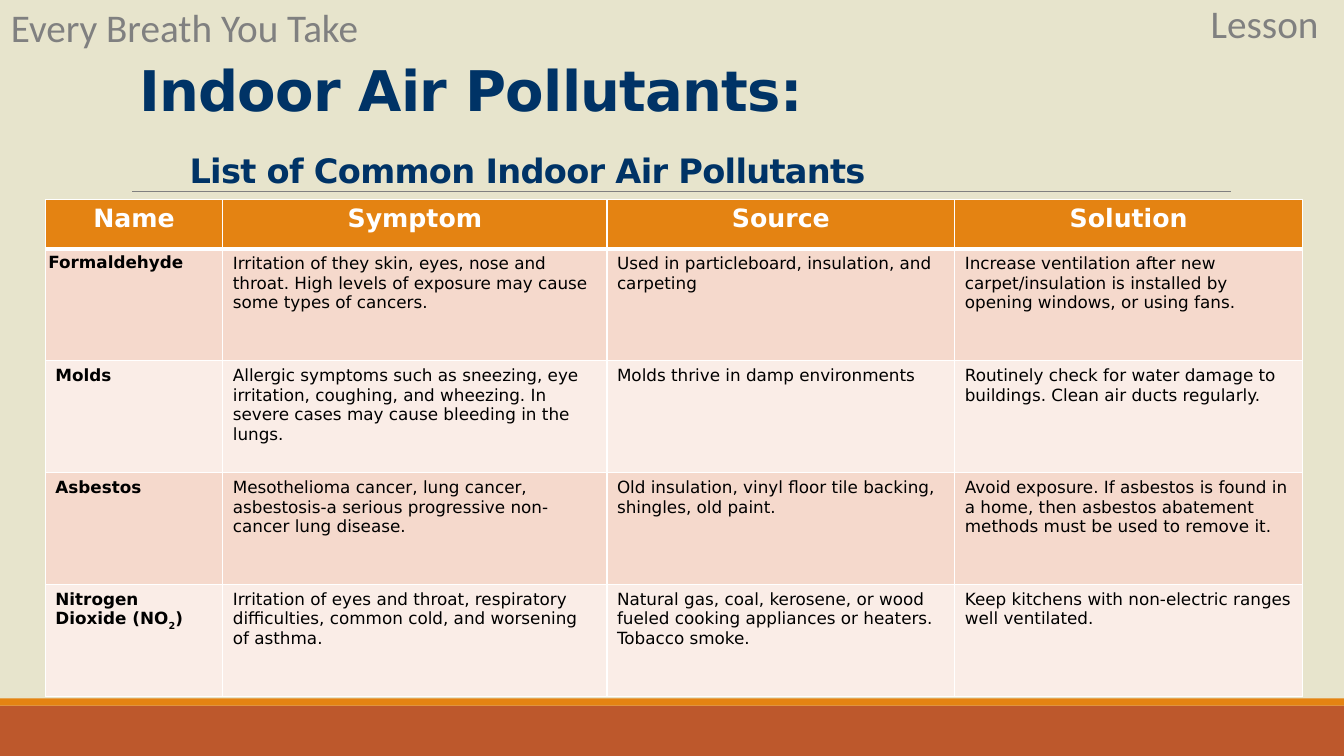
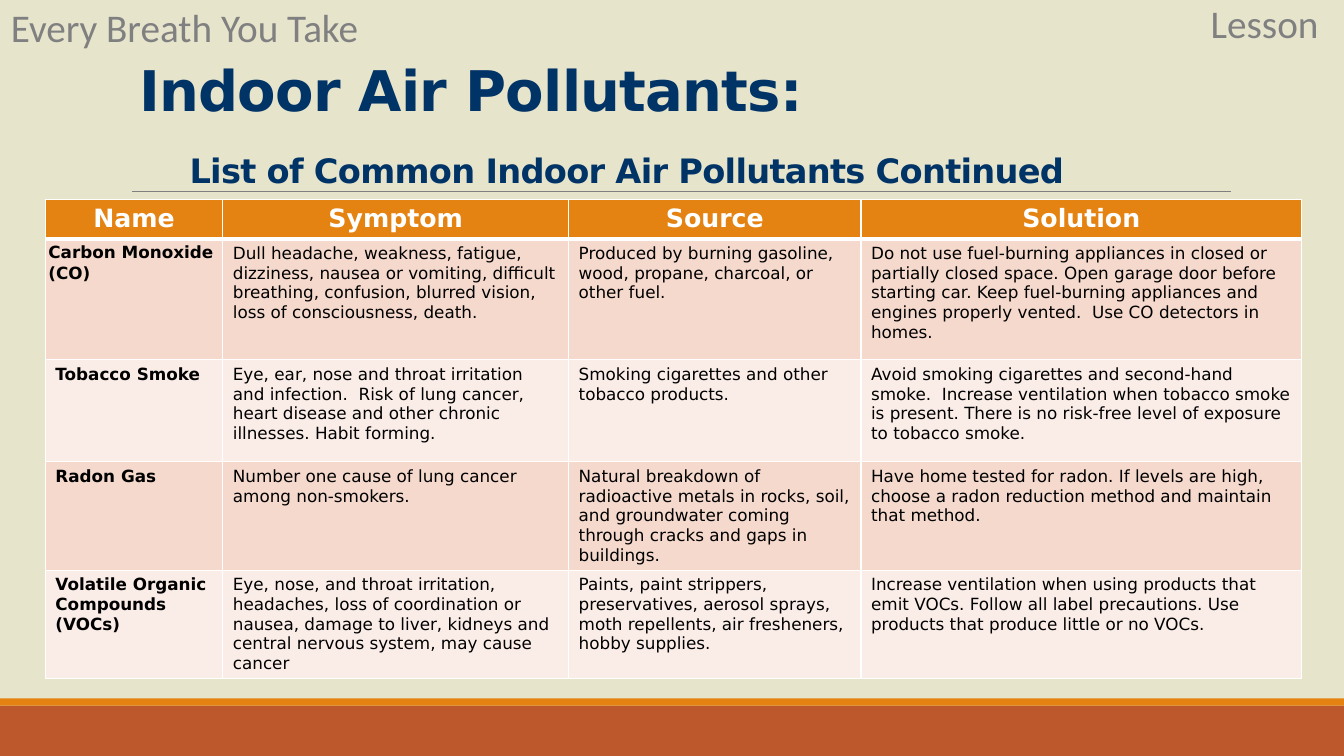
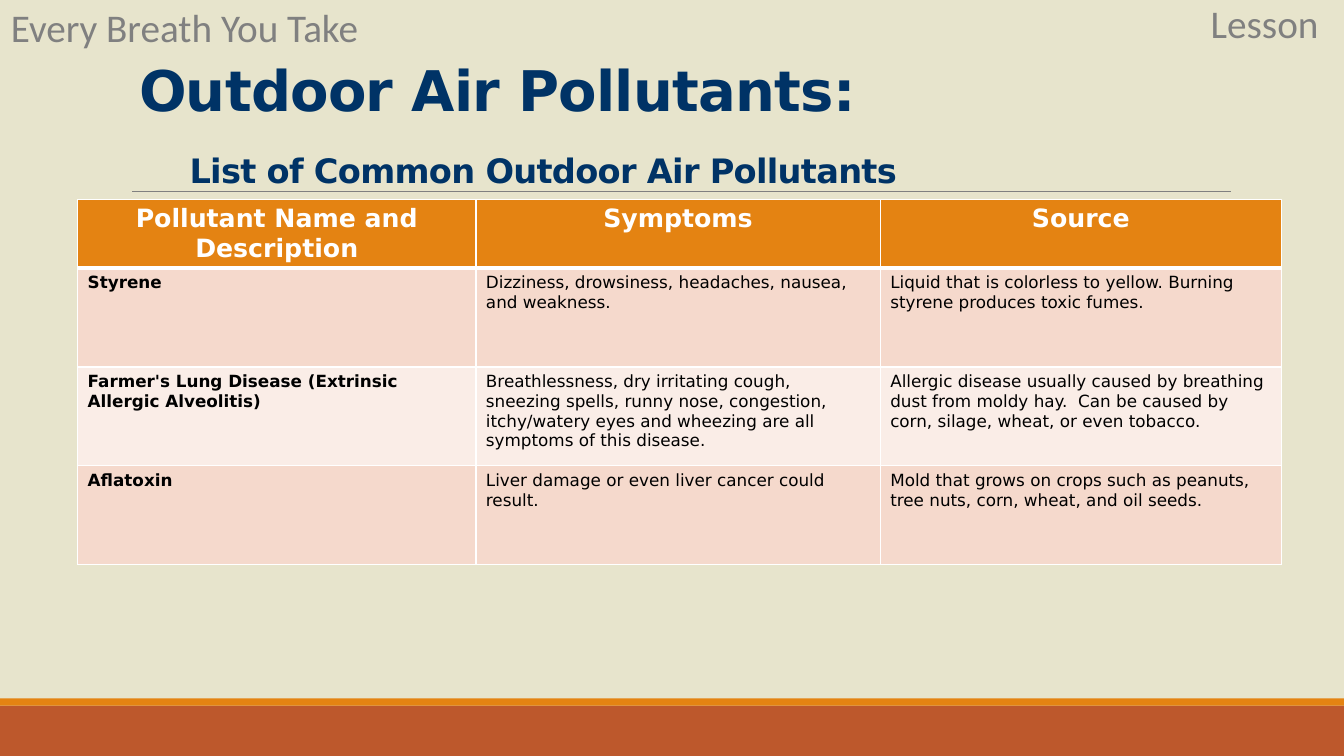
from lxml import etree
from pptx import Presentation
from pptx.dml.color import RGBColor
from pptx.enum.shapes import MSO_CONNECTOR, MSO_SHAPE
from pptx.enum.text import MSO_ANCHOR, MSO_AUTO_SIZE, PP_ALIGN
from pptx.oxml.ns import qn
from pptx.util import Inches, Pt

RECTANGLE = MSO_SHAPE.RECTANGLE
STRAIGHT = MSO_CONNECTOR.STRAIGHT
BOTTOM, TOP = MSO_ANCHOR.BOTTOM, MSO_ANCHOR.TOP
LEFT, CENTER = PP_ALIGN.LEFT, PP_ALIGN.CENTER
NO_AUTOFIT = MSO_AUTO_SIZE.NONE

CREAM = RGBColor(0xE7, 0xE4, 0xCC)
RUST = RGBColor(0xBD, 0x58, 0x2C)
ORANGE = RGBColor(0xE4, 0x83, 0x12)
GRAY = RGBColor(0x80, 0x80, 0x80)
NAVY = RGBColor(0x00, 0x33, 0x66)
BLACK = RGBColor(0x00, 0x00, 0x00)
WHITE = RGBColor(0xFF, 0xFF, 0xFF)
ROW_FILLS = (RGBColor(0xF5, 0xD9, 0xCC), RGBColor(0xFA, 0xED, 0xE7))

HEADING_FONT, LABEL_FONT = "DejaVu Sans", "Calibri"

# Lengths in inches; boxes are left, top, width, height
SLIDE_W, SLIDE_H = 13.33, 7.5
FOOTER_H, STRIPE_H = 0.5, 0.07
RULE_LEFT, RULE_RIGHT, RULE_Y = 1.31, 12.21, 1.9
TABLE_TOP = 1.98
TITLE, UNIT, LESSON = 0, 1, 2
PLACEHOLDER_BOXES = {
    TITLE: (1.28, 0.39, 11, 1.59),
    UNIT: (0, 0.04, 3.62, 0.55),
    LESSON: (11.9, 0, 1.34, 0.55),
}
TWO_CONTENT_LAYOUT = 3

# Odd parts of a tuple are subscripts
PAGES = [
    {
        "title": "Indoor Air Pollutants:",
        "subtitle": "List of Common Indoor Air Pollutants",
        "left": 0.45,
        "columns": (1.76, 3.81, 3.45, 3.45),
        "rows": (0.49, 1.11, 1.11, 1.11, 1.11),
        "tight_first_name": True,
        "cells": [
            ("Name", "Symptom", "Source", "Solution"),
            ("Formaldehyde",
             "Irritation of they skin, eyes, nose and throat. High levels of exposure may "
             "cause some types of cancers.",
             "Used in particleboard, insulation, and carpeting",
             "Increase ventilation after new carpet/insulation is installed by opening "
             "windows, or using fans."),
            ("Molds",
             "Allergic symptoms such as sneezing, eye irritation, coughing, and wheezing. "
             "In severe cases may cause bleeding in the lungs.",
             "Molds thrive in damp environments",
             "Routinely check for water damage to buildings. Clean air ducts regularly."),
            ("Asbestos",
             "Mesothelioma cancer, lung cancer, asbestosis-a serious progressive "
             "non-cancer lung disease.",
             "Old insulation, vinyl floor tile backing, shingles, old paint.",
             "Avoid exposure. If asbestos is found in a home, then asbestos abatement "
             "methods must be used to remove it."),
            (("Nitrogen Dioxide (NO", "2", ")"),
             "Irritation of eyes and throat, respiratory difficulties, common cold, and "
             "worsening of asthma.",
             "Natural gas, coal, kerosene, or wood fueled cooking appliances or heaters. "
             "Tobacco smoke.",
             "Keep kitchens with non-electric ranges well ventilated."),
        ],
    },
    {
        "title": "Indoor Air Pollutants:",
        "subtitle": "List of Common Indoor Air Pollutants Continued",
        "left": 0.45,
        "columns": (1.76, 3.43, 2.9, 4.37),
        "rows": (0.32, 1.2, 1.01, 1.01, 1.01),
        "tight_first_name": True,
        "cells": [
            ("Name", "Symptom", "Source", "Solution"),
            ("Carbon Monoxide (CO)",
             "Dull headache, weakness, fatigue, dizziness, nausea or vomiting, difficult "
             "breathing, confusion, blurred vision, loss of consciousness, death.",
             "Produced by burning gasoline, wood, propane, charcoal, or other fuel.",
             "Do not use fuel-burning appliances in closed or partially closed space. Open "
             "garage door before starting car. Keep fuel-burning appliances and engines "
             "properly vented.  Use CO detectors in homes."),
            ("Tobacco Smoke",
             "Eye, ear, nose and throat irritation and infection.  Risk of lung cancer, "
             "heart disease and other chronic illnesses. Habit forming.",
             "Smoking cigarettes and other tobacco products.",
             "Avoid smoking cigarettes and second-hand smoke.  Increase ventilation when "
             "tobacco smoke is present. There is no risk-free level of exposure to tobacco "
             "smoke."),
            ("Radon Gas",
             "Number one cause of lung cancer among non-smokers.",
             "Natural breakdown of radioactive metals in rocks, soil, and groundwater "
             "coming through cracks and gaps in buildings.",
             "Have home tested for radon. If levels are high, choose a radon reduction "
             "method and maintain that method."),
            ("Volatile Organic Compounds (VOCs)",
             "Eye, nose, and throat irritation, headaches, loss of coordination or nausea, "
             "damage to liver, kidneys and central nervous system, may cause cancer",
             "Paints, paint strippers, preservatives, aerosol sprays, moth repellents, air "
             "fresheners, hobby supplies.",
             "Increase ventilation when using products that emit VOCs. Follow all label "
             "precautions. Use products that produce little or no VOCs."),
        ],
    },
    {
        "title": "Outdoor Air Pollutants:",
        "subtitle": "List of Common Outdoor Air Pollutants",
        "left": 0.77,
        "columns": (3.95, 4.01, 3.98),
        "rows": (0.54, 0.98, 0.98, 0.98),
        "tight_first_name": False,
        "cells": [
            ("Pollutant Name and Description", "Symptoms", "Source"),
            ("Styrene",
             "Dizziness, drowsiness, headaches, nausea, and weakness.",
             "Liquid that is colorless to yellow. Burning styrene produces toxic fumes."),
            ("Farmer's Lung Disease (Extrinsic Allergic Alveolitis)",
             "Breathlessness, dry irritating cough, sneezing spells, runny nose, "
             "congestion, itchy/watery eyes and wheezing are all symptoms of this disease.",
             "Allergic disease usually caused by breathing dust from moldy hay.  Can be "
             "caused by corn, silage, wheat, or even tobacco."),
            ("Aflatoxin",
             "Liver damage or even liver cancer could result.",
             "Mold that grows on crops such as peanuts, tree nuts, corn, wheat, and oil "
             "seeds."),
        ],
    },
]


def add_run(paragraph, text, size, color, font=HEADING_FONT, bold=False):
    run = paragraph.add_run()
    run.text = text
    run.font.size = Pt(size)
    run.font.name = font
    run.font.bold = bold
    run.font.color.rgb = color
    return run


def prepare_template(prs):
    """Set the shared background and the places of the placeholders."""
    fill = prs.slide_master.background.fill
    fill.solid()
    fill.fore_color.rgb = CREAM
    layout = prs.slide_layouts[TWO_CONTENT_LAYOUT]
    for holder in layout.placeholders:
        box = PLACEHOLDER_BOXES.get(holder.placeholder_format.idx)
        if box:
            holder.left, holder.top, holder.width, holder.height = map(Inches, box)
    return layout


def add_bands(slide):
    """Footer band, the stripe above it and the rule under the title."""
    footer_top = SLIDE_H - FOOTER_H
    for top, height, color in ((footer_top, FOOTER_H, RUST),
                               (footer_top - STRIPE_H, STRIPE_H, ORANGE)):
        band = slide.shapes.add_shape(
            RECTANGLE, 0, Inches(top), Inches(SLIDE_W), Inches(height))
        band.shadow.inherit = False
        band.fill.solid()
        band.fill.fore_color.rgb = color
        band.line.fill.background()
    rule = slide.shapes.add_connector(
        STRAIGHT, Inches(RULE_LEFT), Inches(RULE_Y), Inches(RULE_RIGHT), Inches(RULE_Y))
    rule.line.color.rgb = GRAY
    rule.line.width = Pt(0.5)
    etree.SubElement(rule._element.spPr, qn("a:effectLst"))


def fill_label(holder, text):
    """Corner label with a blank bullet."""
    frame = holder.text_frame
    frame.auto_size = NO_AUTOFIT
    frame.vertical_anchor = TOP
    frame.margin_left = frame.margin_right = 0
    paragraph = frame.paragraphs[0]
    paragraph.line_spacing = 0.9
    paragraph.space_before, paragraph.space_after = Pt(12), Pt(2)
    props = paragraph._p.get_or_add_pPr()
    hang = Inches(0.1)
    props.set("marL", str(hang))
    props.set("indent", str(-hang))
    bullet_color = etree.SubElement(props, qn("a:buClr"))
    etree.SubElement(bullet_color, qn("a:srgbClr"), val=str(ORANGE))
    etree.SubElement(props, qn("a:buChar"), char=" ")
    add_run(paragraph, text, 28, GRAY, LABEL_FONT)


def fill_title(holder, title, subtitle):
    frame = holder.text_frame
    frame.auto_size = NO_AUTOFIT
    frame.vertical_anchor = BOTTOM
    lines = (((title, 40),), (("\t", 40), (subtitle, 24)))
    for number, parts in enumerate(lines):
        paragraph = frame.add_paragraph() if number else frame.paragraphs[0]
        paragraph.alignment = LEFT
        paragraph.line_spacing = 1.07
        for text, size in parts:
            run = add_run(paragraph, text, size, NAVY, bold=True)
            run.font._element.set("spc", "-50")


def set_borders(cell, top, bottom):
    """White borders; top and bottom widths in points."""
    props = cell._tc.get_or_add_tcPr()
    for side, width in (("L", 1), ("R", 1), ("T", top), ("B", bottom)):
        line = etree.SubElement(props, qn(f"a:ln{side}"), w=str(Pt(width)))
        solid = etree.SubElement(line, qn("a:solidFill"))
        etree.SubElement(solid, qn("a:srgbClr"), val=str(WHITE))


def fill_cell(cell, content, row, column):
    header = row == 0
    set_borders(cell, top=3 if row == 1 else 1, bottom=3 if header else 1)
    cell.fill.solid()
    cell.fill.fore_color.rgb = ORANGE if header else ROW_FILLS[(row - 1) % 2]
    paragraph = cell.text_frame.paragraphs[0]
    paragraph.alignment = CENTER if header else LEFT
    size, color = (18, WHITE) if header else (12, BLACK)
    parts = (content,) if isinstance(content, str) else content
    for number, part in enumerate(parts):
        run = add_run(paragraph, part, size, color, bold=header or column == 0)
        if number % 2:
            run.font._element.set("baseline", "-25000")


def tighten(cell):
    cell.margin_left = cell.margin_right = Inches(0.03)
    cell.margin_top = cell.margin_bottom = Inches(0.03)
    cell.text_frame.paragraphs[0].line_spacing = 1.07


def add_pollutant_table(slide, page):
    widths, heights = page["columns"], page["rows"]
    table = slide.shapes.add_table(
        len(heights), len(widths), Inches(page["left"]), Inches(TABLE_TOP),
        Inches(sum(widths)), Inches(sum(heights))).table
    table.first_row = table.horz_banding = False
    for column, width in zip(table.columns, widths):
        column.width = Inches(width)
    for row, height in zip(table.rows, heights):
        row.height = Inches(height)
    for r, contents in enumerate(page["cells"]):
        for c, content in enumerate(contents):
            fill_cell(table.cell(r, c), content, r, c)
    if page["tight_first_name"]:
        tighten(table.cell(1, 0))


def add_pollutant_slide(prs, layout, page):
    slide = prs.slides.add_slide(layout)
    holders = {holder.placeholder_format.idx: holder for holder in slide.placeholders}
    add_bands(slide)
    fill_label(holders[LESSON], "Lesson")
    fill_label(holders[UNIT], "Every Breath You Take")
    fill_title(holders[TITLE], page["title"], page["subtitle"])
    add_pollutant_table(slide, page)


def main():
    prs = Presentation()
    prs.slide_width, prs.slide_height = Inches(SLIDE_W), Inches(SLIDE_H)
    layout = prepare_template(prs)
    for page in PAGES:
        add_pollutant_slide(prs, layout, page)
    prs.save("out.pptx")


if __name__ == "__main__":
    main()
